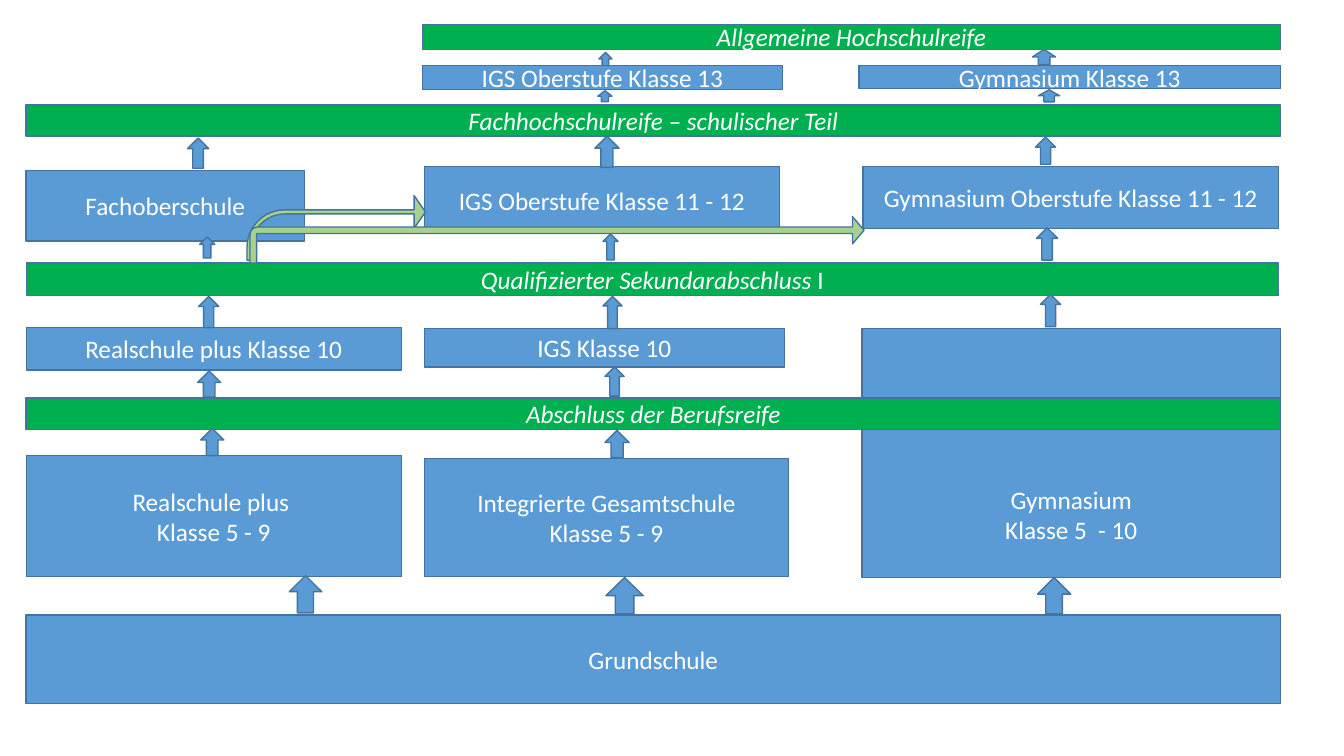
from pptx import Presentation
from pptx import util as u
from pptx.dml.color import RGBColor
from pptx.enum import shapes, text

PX = 9144
COLORS = {"school": "5B9BD5", "degree": "00B050", "path": "A9D18E",
          "outline": "43739E", "label": "FFFFFF"}

SCHOOLS = [
    ("Grundschule", 26, 610, 1244, 88),
    ("Realschule plus \nKlasse 5 - 9", 26, 452, 372, 120),
    ("Integrierte Gesamtschule\nKlasse 5 - 9", 421, 455, 361, 117),
    ("Realschule plus Klasse 10", 26, 325, 372, 42),
    ("IGS Klasse 10", 421, 326, 357, 38),
    ("Fachoberschule", 26, 169, 276, 70),
    ("IGS Oberstufe Klasse 11 - 12", 421, 165, 352, 67),
    ("Gymnasium Oberstufe Klasse 11 - 12", 856, 165, 412, 62),
    ("IGS Oberstufe Klasse 13", 419, 65, 357, 24),
    ("Gymnasium Klasse 13", 852, 65, 418, 23),
]
DEGREES = [
    ("Abschluss der Berufsreife", 26, 395, 1244, 31),
    ("Fachhochschulreife – schulischer Teil", 26, 104, 1244, 31),
    ("Allgemeine Hochschulreife", 419, 24, 851, 25),
]
STEPS = [
    (287, 571, 32, 37), (601, 573, 37, 36), (1029, 573, 33, 36),
    (199, 425, 23, 27), (600, 427, 24, 27),
    (196, 368, 23, 26), (600, 364, 19, 29),
    (197, 294, 20, 31), (598, 294, 19, 32), (1032, 292, 20, 32),
    (198, 235, 15, 21), (598, 232, 15, 26), (1028, 226, 21, 32),
    (186, 137, 21, 30), (590, 135, 24, 31), (1027, 136, 20, 27),
    (593, 90, 14, 11), (1030, 89, 21, 12),
    (594, 52, 13, 13), (1024, 49, 23, 15),
]
PATHS = [
    ((245, 194, 177, 64), (0.063, 0.254, 0.176, 0.585)),
    ((248, 215, 609, 46), (0.142, 0.293, 0.25, 0.16)),
]


def rgb(name):
    """Return the named colour."""
    return RGBColor.from_string(COLORS[name])


def add_figure(slide, kind, place, color):
    """Add a preset shape with a flat fill and the common outline."""
    shape = slide.shapes.add_shape(kind, *(length * PX for length in place))
    shape.shadow.inherit = False
    shape.fill.solid()
    shape.fill.fore_color.rgb = rgb(color)
    shape.line.color.rgb = rgb("outline")
    shape.line.width = u.Pt(1)
    return shape


def format_run(run, italic):
    """Apply the label font to a run."""
    run.font.name = "Calibri"
    run.font.size = u.Pt(18)
    run.font.italic = italic
    run.font.color.rgb = rgb("label")


def add_box(slide, label, place, color, italic=False):
    """Add a rectangle with a centred label."""
    shape = add_figure(slide, shapes.MSO_SHAPE.RECTANGLE, place, color)
    frame = shape.text_frame
    frame.word_wrap = True
    frame.vertical_anchor = text.MSO_ANCHOR.MIDDLE
    frame.text = label
    for paragraph in frame.paragraphs:
        paragraph.alignment = text.PP_ALIGN.CENTER
        for run in paragraph.runs:
            format_run(run, italic)
    return shape


def add_path(slide, place, adjustments):
    """Add a bent arrow that leads to an upper school."""
    shape = add_figure(slide, shapes.MSO_SHAPE.BENT_ARROW, place, "path")
    for index, value in enumerate(adjustments):
        shape.adjustments[index] = value


def main():
    """Build the school system slide."""
    presentation = Presentation()
    presentation.slide_width = 1333 * PX
    presentation.slide_height = 750 * PX
    slide = presentation.slides.add_slide(presentation.slide_layouts[6])

    for label, *place in SCHOOLS:
        add_box(slide, label, place, "school")
    gymnasium = add_box(slide, "Gymnasium\nKlasse 5  - 10",
                        (855, 326, 415, 247), "school")
    gymnasium.text_frame.margin_top = 127 * PX

    for label, *place in DEGREES:
        add_box(slide, label, place, "degree", italic=True)
    secondary = add_box(slide, "Qualifizierter Sekundarabschluss ",
                        (26, 261, 1242, 32), "degree", italic=True)
    numeral = secondary.text_frame.paragraphs[0].add_run()
    numeral.text = "I"
    format_run(numeral, italic=False)

    for place in STEPS:
        add_figure(slide, shapes.MSO_SHAPE.UP_ARROW, place, "school")
    for place, adjustments in PATHS:
        add_path(slide, place, adjustments)
    presentation.save("out.pptx")


if __name__ == "__main__":
    main()
